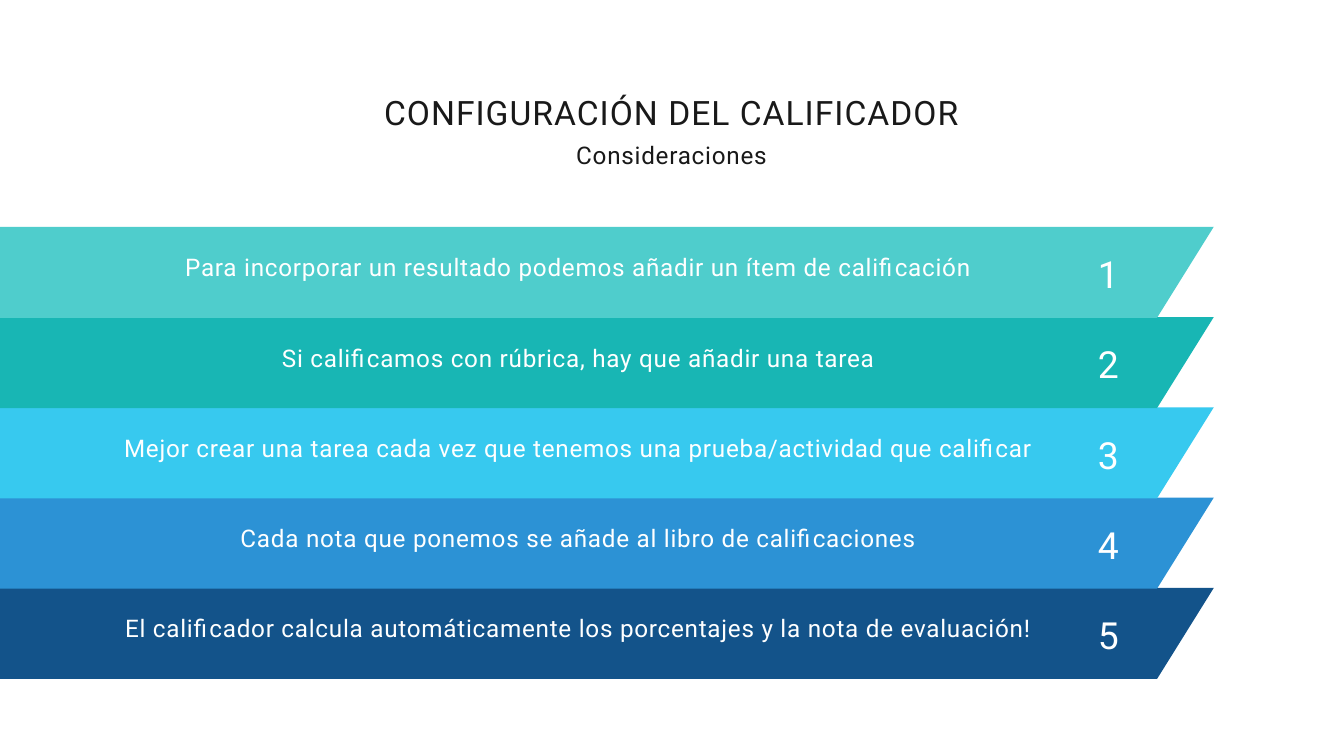
from dataclasses import dataclass

from pptx import Presentation
from pptx.dml.color import RGBColor
from pptx.enum.text import MSO_ANCHOR, MSO_AUTO_SIZE, PP_ALIGN
from pptx.oxml.ns import qn
from pptx.shapes.base import BaseShape
from pptx.slide import Slide
from pptx.util import Pt

PX = 9525  # EMU in one px


@dataclass(frozen=True)
class Type:
    """Size, line height and tracking in points."""
    size: float
    line: float
    track: float
    color: str


@dataclass(frozen=True)
class Theme:
    font: str = "Roboto"
    title: Type = Type(36, 47.2, 1.1, "191919")
    sub: Type = Type(26, 36.4, 0.8, "191919")
    label: Type = Type(26, 36.4, 0.8, "FFFFFF")
    digit: Type = Type(40, 56, 1.2, "FFFFFF")


@dataclass(frozen=True)
class Box:
    left: int
    top: int
    width: int
    height: int


@dataclass(frozen=True)
class Step:
    number: int
    text: str
    color: str


THEME = Theme()
TOP, PITCH, HEIGHT = 324, 129, 130
LEFT, RIGHT, SLANT = -82, 1734, 81

STEPS = [
    Step(1, "Para incorporar un resultado podemos añadir un ítem de calificación", "4FCDCC"),
    Step(2, "Si calificamos con rúbrica, hay que añadir una tarea", "18B6B4"),
    Step(3, "Mejor crear una tarea cada vez que tenemos una prueba/actividad que calificar", "37C9EF"),
    Step(4, "Cada nota que ponemos se añade al libro de calificaciones", "2C92D5"),
    Step(5, "El calificador calcula automáticamente los porcentajes y la nota de evaluación!", "13538A"),
]


def write(shape: BaseShape, box: Box, text: str, kind: Type,
          anchor: MSO_ANCHOR = MSO_ANCHOR.TOP, inset: int = 0) -> None:
    """Place a text shape and fill it with one centred line."""
    shape.left, shape.top = box.left * PX, box.top * PX
    shape.width, shape.height = box.width * PX, box.height * PX
    frame = shape.text_frame
    frame.text = text
    frame.word_wrap = True
    frame.auto_size = MSO_AUTO_SIZE.NONE
    frame.vertical_anchor = anchor
    frame.margin_left = frame.margin_right = inset * PX
    frame.margin_top = frame.margin_bottom = inset * PX
    line = frame.paragraphs[0]
    line.alignment = PP_ALIGN.CENTER
    line.line_spacing = Pt(kind.line)
    line.space_before = Pt(0)
    line.font.name = THEME.font
    line.font.size = Pt(kind.size)
    line.font.color.rgb = RGBColor.from_string(kind.color)
    props = line._p.get_or_add_pPr().find(qn("a:defRPr"))
    props.set("spc", str(round(kind.track * 100)))


def draw_bar(slide: Slide, top: int, color: str) -> None:
    pen = slide.shapes.build_freeform(LEFT + SLANT, top, scale=PX)
    pen.add_line_segments([
        (RIGHT, top),
        (RIGHT - SLANT, top + HEIGHT),
        (LEFT, top + HEIGHT),
    ])
    bar = pen.convert_to_shape()
    bar.shadow.inherit = False
    bar.fill.solid()
    bar.fill.fore_color.rgb = RGBColor.from_string(color)
    bar.line.fill.background()


def draw_step(slide: Slide, step: Step) -> None:
    top = TOP + (step.number - 1) * PITCH
    draw_bar(slide, top, step.color)
    label = slide.shapes.add_textbox(0, 0, 0, 0)
    write(label, Box(-41, top - 23, 1735, 154), step.text, THEME.label,
          MSO_ANCHOR.MIDDLE, 6)
    digit = slide.shapes.add_textbox(0, 0, 0, 0)
    write(digit, Box(1547, top + 24, 73, 71), str(step.number), THEME.digit)


def main() -> None:
    deck = Presentation()
    deck.slide_width, deck.slide_height = 1920 * PX, 1080 * PX
    slide = deck.slides.add_slide(deck.slide_layouts[0])
    title, sub = slide.placeholders
    write(title, Box(372, 126, 1175, 60), "CONFIGURACIÓN DEL CALIFICADOR", THEME.title)
    write(sub, Box(372, 193, 1175, 45), "Consideraciones", THEME.sub)
    for step in reversed(STEPS):
        draw_step(slide, step)
    deck.save("out.pptx")


if __name__ == "__main__":
    main()
